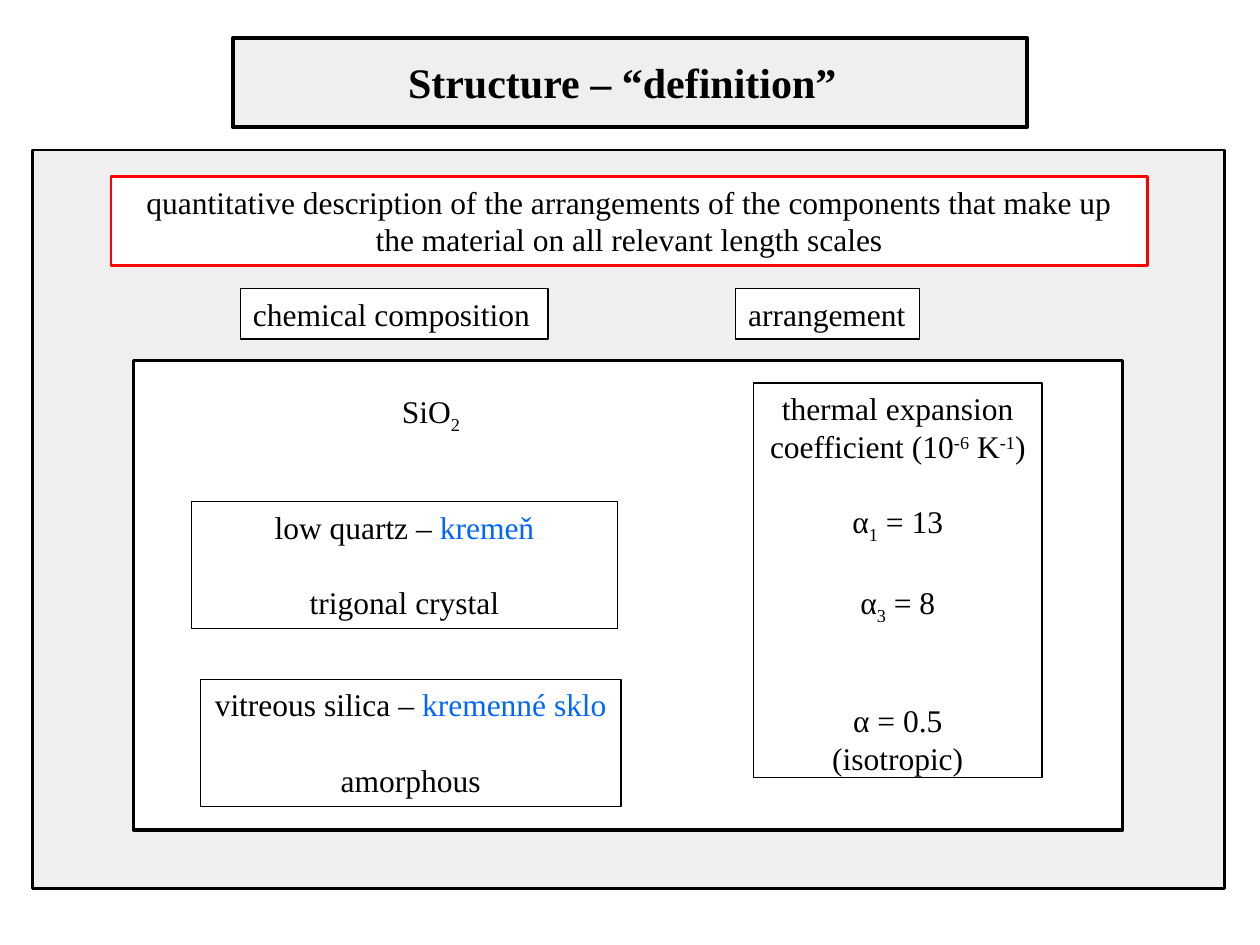
from dataclasses import dataclass

import pptx
import pptx.dml.color
import pptx.enum.shapes
import pptx.enum.text
import pptx.util

Inches = pptx.util.Inches
Pt = pptx.util.Pt
ALIGN = pptx.enum.text.PP_ALIGN


@dataclass(frozen=True)
class Theme:
    font: str = "Times New Roman"
    title_size: float = 24
    body_size: float = 18
    blank_line: float = 21.5
    ink: str = "000000"
    translation: str = "0066FF"
    highlight: str = "FF0000"
    panel: str = "EFEFEF"
    paper: str = "FFFFFF"


THEME = Theme()
BASELINES = {"sub": "-25000", "sup": "30000"}


def rgb(value):
    return pptx.dml.color.RGBColor.from_string(value)


def add_box(slide, at, fill=None, line=THEME.ink, weight=0.75):
    box = slide.shapes.add_shape(
        pptx.enum.shapes.MSO_SHAPE.RECTANGLE, *map(Inches, at))
    box.shadow.inherit = False
    if fill:
        box.fill.solid()
        box.fill.fore_color.rgb = rgb(fill)
    else:
        box.fill.background()
    box.line.color.rgb = rgb(line)
    box.line.width = Pt(weight)
    return box


def add_label(slide, at):
    return slide.shapes.add_textbox(*map(Inches, at))


def write(shape, lines, align=ALIGN.LEFT, size=THEME.body_size, bold=False):
    """Fill shape with lines, each (blank lines above, [(text, style), ...])."""
    frame = shape.text_frame
    frame.word_wrap = True
    frame.vertical_anchor = pptx.enum.text.MSO_ANCHOR.TOP
    font_format = {"name": THEME.font, "size": Pt(size), "bold": bold}
    for index, (blank_lines, pieces) in enumerate(lines):
        paragraph = frame.paragraphs[0] if index == 0 else frame.add_paragraph()
        paragraph.alignment = align
        if blank_lines:
            paragraph.space_before = Pt(blank_lines * THEME.blank_line)
        for text, style in pieces:
            run = paragraph.add_run()
            run.text = text
            for key, value in font_format.items():
                setattr(run.font, key, value)
            run.font.color.rgb = rgb(
                THEME.translation if style == "translation" else THEME.ink)
            if style in BASELINES:
                run._r.get_or_add_rPr().set("baseline", BASELINES[style])


def plain(text, blank_lines=0):
    return blank_lines, [(text, None)]


def add_material(slide, at, english, czech, order):
    write(add_box(slide, at),
          [(0, [(f"{english} – ", None), (czech, "translation")]),
           plain(order, blank_lines=1)],
          ALIGN.CENTER)


def add_expansion(slide, at):
    write(add_box(slide, at), [
        plain("thermal expansion"),
        (0, [("coefficient (10", None), ("-6", "sup"), (" K", None),
             ("-1", "sup"), (")", None)]),
        (1, [("α", None), ("1", "sub"), (" = 13", None)]),
        (1, [("α", None), ("3", "sub"), (" = 8", None)]),
        plain("α = 0.5", blank_lines=2),
        plain("(isotropic)"),
    ], ALIGN.CENTER)


def main():
    deck = pptx.Presentation()
    deck.slide_width, deck.slide_height = Inches(10), Inches(7.5)
    slide = deck.slides.add_slide(deck.slide_layouts[6])

    add_box(slide, (1.85, 0.3, 6.3, 0.71), THEME.panel, weight=2.25)
    add_box(slide, (0.26, 1.19, 9.46, 5.86), THEME.panel, weight=1.5)
    write(add_label(slide, (3.14, 0.4, 3.72, 0.5)),
          [plain("Structure – “definition”")],
          size=THEME.title_size, bold=True)

    definition = add_box(slide, (0.88, 1.4, 8.23, 0.71), THEME.paper,
                         THEME.highlight, 1.5)
    write(definition, [
        plain("quantitative description of the arrangements "
              "of the components that make up"),
        plain("the material on all relevant length scales"),
    ], ALIGN.CENTER)

    for left, width, aspect in ((1.91, 2.44, "chemical composition"),
                                (5.84, 1.46, "arrangement")):
        write(add_box(slide, (left, 2.29, width, 0.4), THEME.paper),
              [plain(aspect)])

    add_box(slide, (1.06, 2.86, 7.85, 3.73), THEME.paper, weight=2)
    write(add_label(slide, (3.09, 3.06, 0.68, 0.4)),
          [(0, [("SiO", None), ("2", "sub")])])
    add_material(slide, (1.52, 3.98, 3.38, 1.01),
                 "low quartz", "kremeň", "trigonal crystal")
    add_material(slide, (1.59, 5.39, 3.34, 1.01),
                 "vitreous silica", "kremenné sklo", "amorphous")
    add_expansion(slide, (5.98, 3.04, 2.29, 3.13))

    deck.save("out.pptx")


if __name__ == "__main__":
    main()
